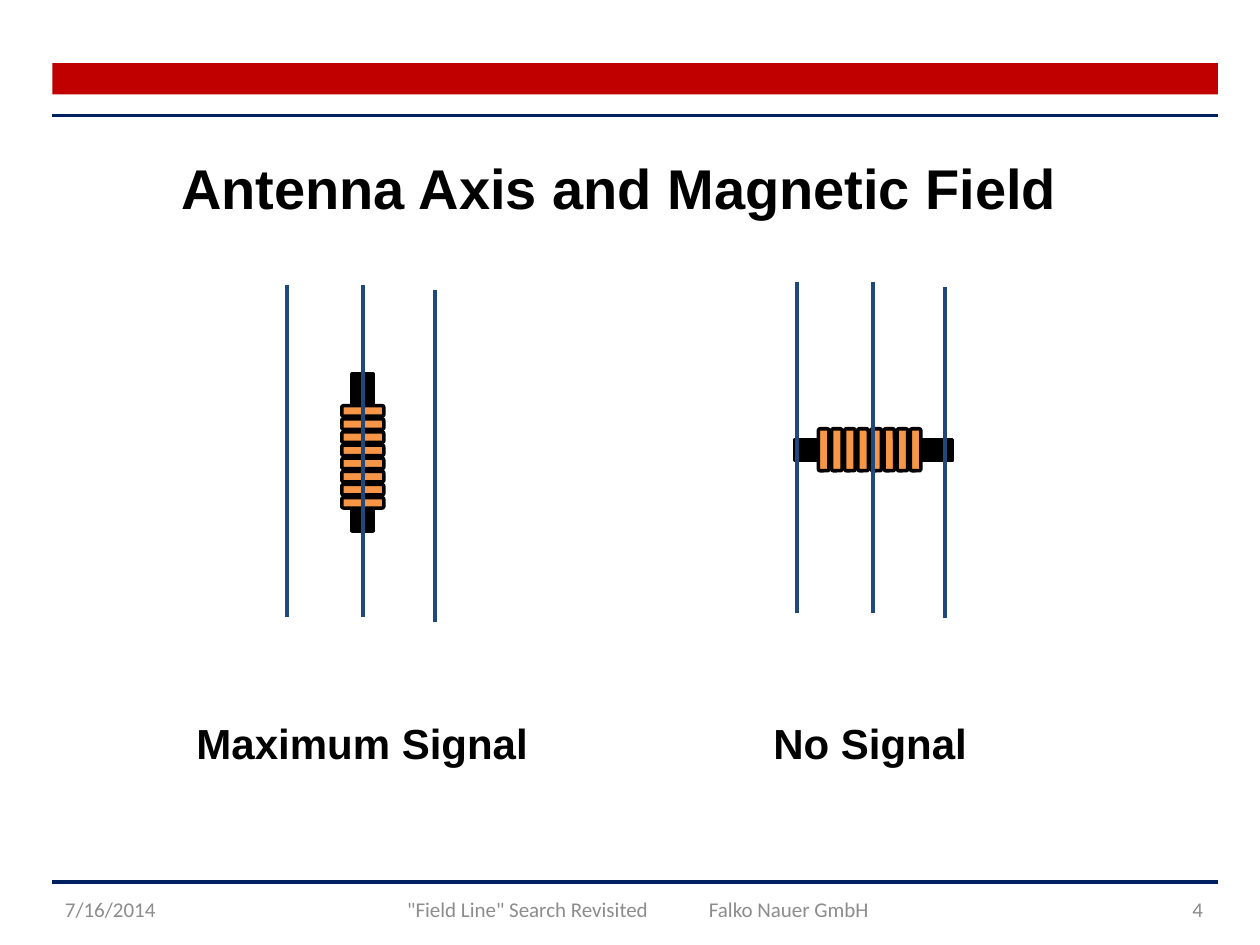
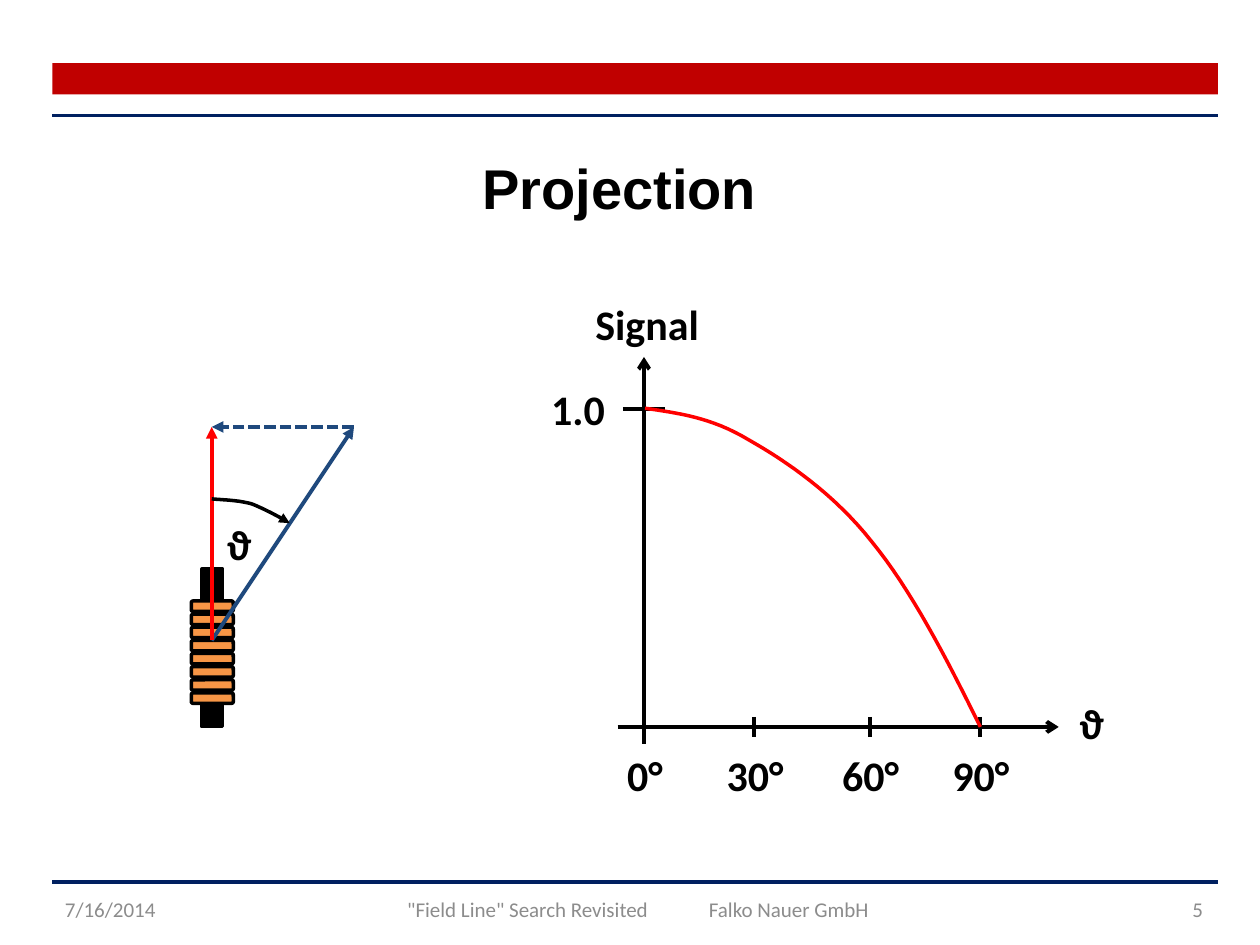
import lxml.etree
import pptx
import pptx.dml.color
import pptx.enum.dml
import pptx.enum.shapes
import pptx.enum.text
import pptx.oxml.ns
import pptx.util

Pt = pptx.util.Pt
RGBColor = pptx.dml.color.RGBColor
SHAPE = pptx.enum.shapes.MSO_SHAPE
ALIGN = pptx.enum.text.PP_ALIGN
ANCHOR = pptx.enum.text.MSO_ANCHOR
qn = pptx.oxml.ns.qn

BLACK = RGBColor(0x00, 0x00, 0x00)
NAVY = RGBColor(0x00, 0x20, 0x60)
DARK_RED = RGBColor(0xC0, 0x00, 0x00)
RED = RGBColor(0xFF, 0x00, 0x00)
BLUE = RGBColor(0x1F, 0x49, 0x7D)
COPPER = RGBColor(0xF7, 0x96, 0x46)
GREY = RGBColor(0x8C, 0x8C, 0x8C)


def add_text(slide, text, x, y, w, h, size=24, font="Calibri", color=BLACK,
             bold=True, align=ALIGN.CENTER, anchor=ANCHOR.TOP):
    tf = slide.shapes.add_textbox(Pt(x), Pt(y), Pt(w), Pt(h)).text_frame
    tf.word_wrap = True
    tf.vertical_anchor = anchor
    p = tf.paragraphs[0]
    p.text = text
    p.alignment = align
    f = p.runs[0].font
    f.name, f.size, f.bold = font, Pt(size), bold
    f.color.rgb = color


def add_line(slide, points, color, width=2.25, arrow=None, dash=None):
    """Two points give a straight line, 3n + 1 points a chain of Bezier curves."""
    if len(points) == 2:
        (x1, y1), (x2, y2) = points
        sp = slide.shapes.add_connector(pptx.enum.shapes.MSO_CONNECTOR.STRAIGHT,
                                        Pt(x1), Pt(y1), Pt(x2), Pt(y2))
    else:
        curve = []
        for i in range(0, len(points) - 1, 3):
            for step in range(1, 17):
                t = step / 16
                weights = ((1 - t) ** 3, 3 * t * (1 - t) ** 2, 3 * t ** 2 * (1 - t), t ** 3)
                curve.append([100 * sum(k * pt[axis] for k, pt in zip(weights, points[i:i + 4]))
                              for axis in (0, 1)])
        x, y = points[0]
        builder = slide.shapes.build_freeform(100 * x, 100 * y, scale=Pt(1) / 100)
        builder.add_line_segments(curve, close=False)
        sp = builder.convert_to_shape()
        sp.fill.background()
    sp.line.color.rgb = color
    sp.line.width = Pt(width)
    if dash:
        sp.line.dash_style = dash
    spPr = sp.element.spPr
    if arrow:
        lxml.etree.SubElement(spPr.find(qn("a:ln")), qn("a:tailEnd"), type=arrow)
    lxml.etree.SubElement(spPr, qn("a:effectLst"))


prs = pptx.Presentation()
prs.slide_width, prs.slide_height = Pt(720), Pt(540)

# Shared frame, title and footer
slides = []
for number, title in ((4, "Antenna Axis and Magnetic Field"), (5, "Projection")):
    s = prs.slides.add_slide(prs.slide_layouts[6])
    slides.append(s)
    for y in (66, 504):
        add_line(s, [(30, y), (696, y)], NAVY, 2)
    band = s.shapes.add_shape(SHAPE.RECTANGLE, Pt(30), Pt(36), Pt(666), Pt(18))
    band.shadow.inherit = False
    band.fill.solid()
    band.fill.fore_color.rgb = DARK_RED
    band.line.fill.background()
    add_text(s, title, 66, 84, 576, 46, 32, "Arial")
    for text, x, w, align in (
            ("7/16/2014", 30, 96, ALIGN.LEFT),
            ('"Field Line" Search Revisited', 177.5, 200, ALIGN.RIGHT),
            ("Falko Nauer GmbH", 398, 150, ALIGN.LEFT),
            (str(number), 612, 82.5, ALIGN.RIGHT)):
        add_text(s, text, x, 510, w, 19.5, 12, color=GREY, bold=False,
                 align=align, anchor=ANCHOR.MIDDLE)
field, projection = slides

# Ferrite antennas: a core with eight windings, turned upright where needed
for s, cx, cy, angle in ((field, 207.3, 258.6, 270), (field, 499.4, 257, 0),
                         (projection, 121.3, 370.2, 270)):
    coil = s.shapes.add_group_shape()
    parts = [(SHAPE.RECTANGLE, cx - 45, 90, 12, BLACK)]
    parts += [(SHAPE.ROUNDED_RECTANGLE, cx - 31.7 + 7.5 * i, 6, 24, COPPER) for i in range(8)]
    for kind, x, w, h, color in parts:
        sp = coil.shapes.add_shape(kind, Pt(x), Pt(cy - h / 2), Pt(w), Pt(h))
        sp.shadow.inherit = False
        sp.fill.solid()
        sp.fill.fore_color.rgb = color
        sp.line.color.rgb = BLACK
        sp.line.width = Pt(2)
    coil.rotation = angle

# Field lines and captions
for left, top, caption, caption_x in ((164, 163, "Maximum Signal", 102),
                                      (455.5, 161, "No Signal", 392.3)):
    for dx, dy in ((0, 0), (43.4, 0), (84.4, 3)):
        x, y = left + dx, top + dy
        add_line(field, [(x, y), (x, y + 189.3)], BLUE)
    add_text(field, caption, caption_x, 406.3, 210, 36, font="Arial")

# Field vector, its projection on the antenna axis, and the angle
origin, axis_tip, field_tip = (121, 366), (121, 244), (202.3, 244)
add_line(projection, [origin, field_tip], BLUE, arrow="triangle")
add_line(projection, [origin, axis_tip], RED, arrow="triangle")
add_line(projection, [field_tip, axis_tip], BLUE, arrow="triangle",
         dash=pptx.enum.dml.MSO_LINE.SQUARE_DOT)
add_line(projection, [(121, 285.1), (128.9, 285.8), (136, 285.8), (144, 288),
                      (151.2, 290.9), (162, 296.6), (165.6, 299)], BLACK, 2, "triangle")
add_text(projection, "ϑ", 122.5, 293, 30, 36, align=ALIGN.LEFT)

# Signal diagram: axes, ticks and labels
add_line(projection, [(368, 425), (368, 204)], BLACK, arrow="arrow")
add_line(projection, [(353, 415.4), (605, 415.4)], BLACK, arrow="arrow")
add_line(projection, [(356, 233.5), (380, 233.5)], BLACK)
add_text(projection, "Signal", 327.8, 167, 84, 36)
add_text(projection, "1.0", 295.7, 215.5, 57, 36, align=ALIGN.RIGHT)
add_text(projection, "ϑ", 609.7, 395, 30, 36, align=ALIGN.LEFT)
for label, x in (("0°", 368), ("30°", 431), ("60°", 497), ("90°", 560)):
    if x > 368:
        add_line(projection, [(x, 409.7), (x, 421.4)], BLACK)
    add_text(projection, label, x - 25, 425, 51, 36)

# Signal curve
add_line(projection, [(368.6, 233.3), (387.4, 236.2), (406.1, 238.3), (427.7, 251.3),
                      (449.3, 263.5), (476.6, 282.2), (498.2, 309.6),
                      (520.6, 337), (540.7, 375.8), (560.2, 415.4)], RED, 2)

prs.save("out.pptx")
